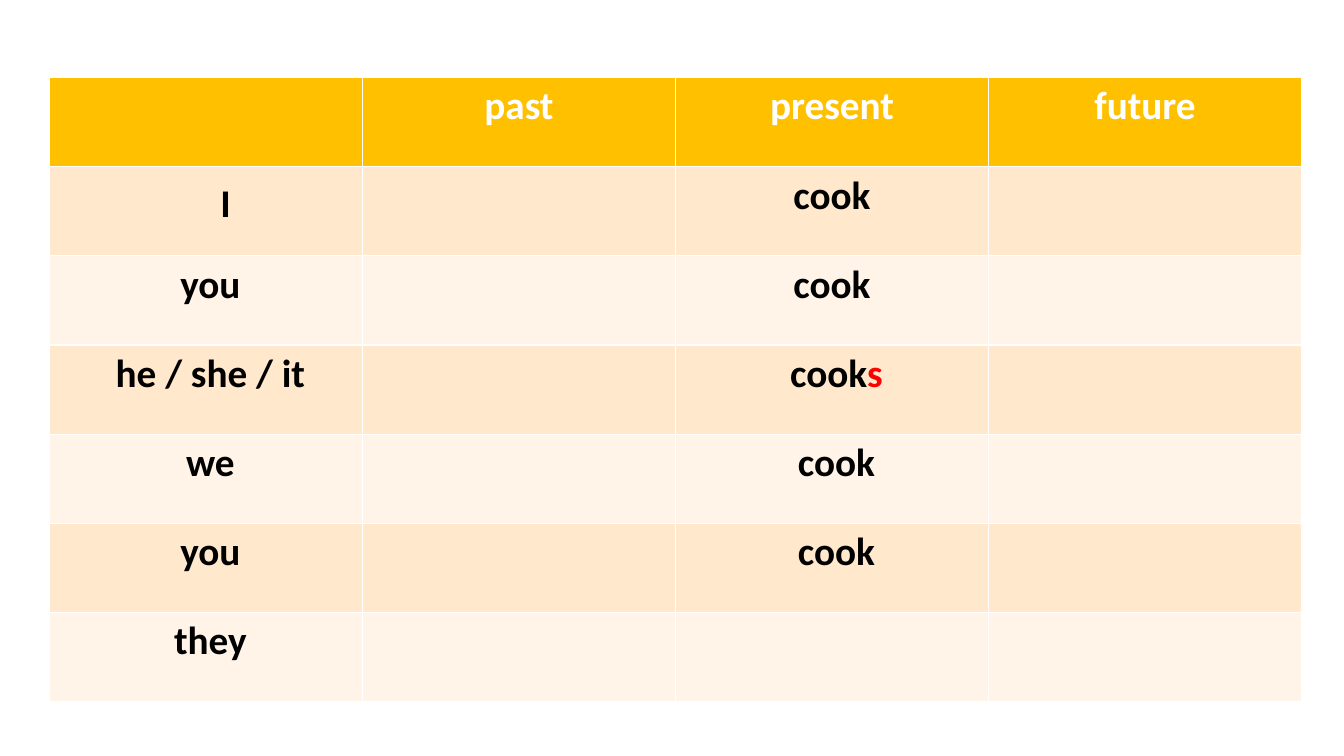
from pptx import Presentation
from pptx.dml.color import RGBColor
from pptx.enum import text
from pptx.util import Inches, Pt

WHITE = RGBColor(0xFF, 0xFF, 0xFF)
BLACK = RGBColor(0x00, 0x00, 0x00)
RED = RGBColor(0xFF, 0x00, 0x00)
GOLD = RGBColor(0xFF, 0xC0, 0x00)
PEACH = RGBColor(0xFF, 0xE8, 0xCC)
CREAM = RGBColor(0xFF, 0xF4, 0xE7)

TENSES = ["", "past", "present", "future"]
CONJUGATION = [
    ("　I", "cook", ""),
    (" you", "cook", ""),
    (" he / she / it", " cook", "s"),
    (" we", " cook", ""),
    (" you", " cook", ""),
    (" they", "", ""),
]


class VerbSlide:
    """Hold the text style and the slide that receives the verb table."""

    def __init__(self, deck, font="Calibri", size=28):
        self.slide = deck.slides.add_slide(deck.slide_layouts[6])
        self.font = font
        self.size = Pt(size)

    def table(self, rows, columns, left, top, width, height):
        frame = self.slide.shapes.add_table(
            rows, columns, Inches(left), Inches(top), Inches(width), Inches(height)
        )
        return frame.table

    def cell(self, cell, fill, color, word="", ending=""):
        cell.fill.solid()
        cell.fill.fore_color.rgb = fill
        para = cell.text_frame.paragraphs[0]
        para.alignment = text.PP_ALIGN.CENTER
        for content, ink in ((word, color), (ending, RED)):
            if content:
                span = para.add_run()
                span.text = content
                span.font.name = self.font
                span.font.size = self.size
                span.font.bold = True
                span.font.color.rgb = ink


def main():
    deck = Presentation()
    deck.slide_width, deck.slide_height = Inches(13.33), Inches(7.5)
    page = VerbSlide(deck)
    table = page.table(len(CONJUGATION) + 1, len(TENSES), 0.49, 0.77, 12.42, 6.19)

    for column, tense in enumerate(TENSES):
        page.cell(table.cell(0, column), GOLD, WHITE, tense)
    for row, (pronoun, verb, ending) in enumerate(CONJUGATION, start=1):
        fill = PEACH if row % 2 else CREAM
        entries = [(pronoun,), (), (verb, ending), ()]
        for column, entry in enumerate(entries):
            page.cell(table.cell(row, column), fill, BLACK, *entry)

    deck.save("out.pptx")


if __name__ == "__main__":
    main()
